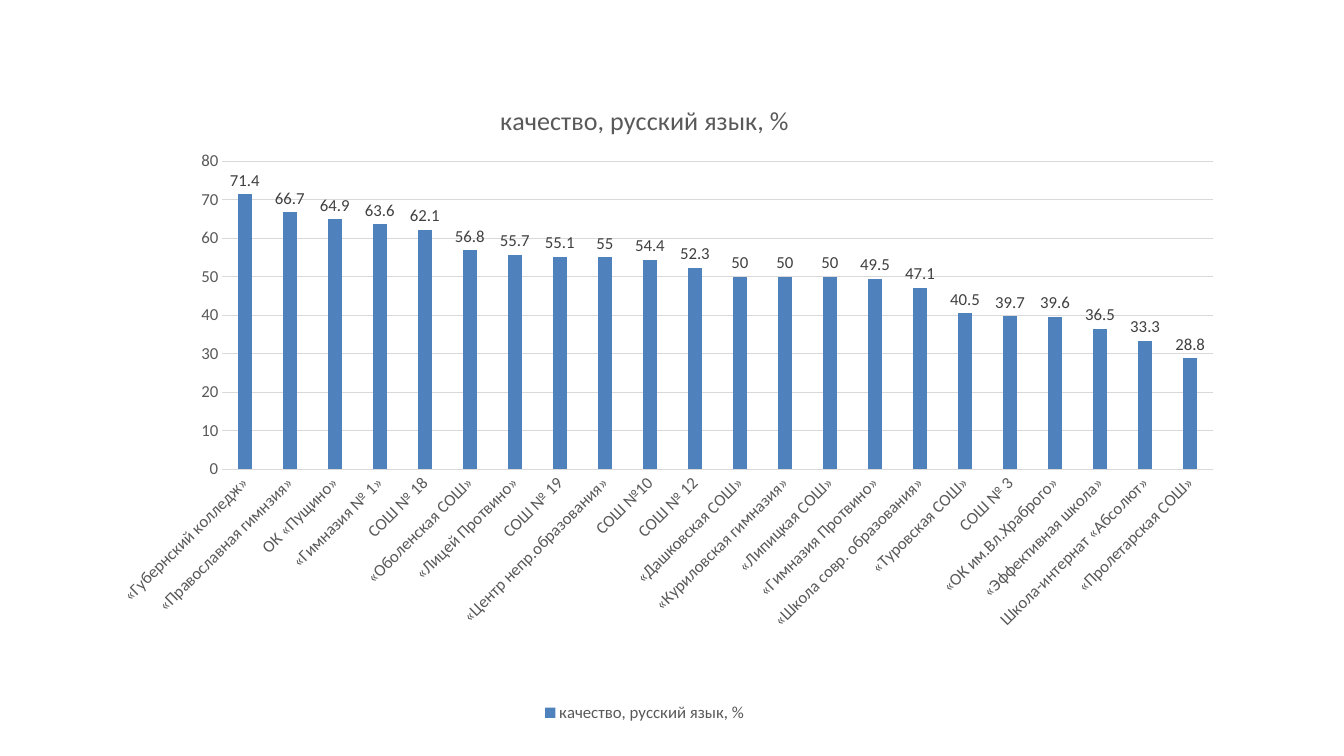
from lxml.etree import SubElement
from pptx import Presentation
from pptx.chart.data import CategoryChartData
from pptx.dml.color import RGBColor
from pptx.enum.chart import XL_CHART_TYPE, XL_LABEL_POSITION, XL_LEGEND_POSITION, XL_TICK_MARK
from pptx.oxml.ns import qn
from pptx.util import Inches, Pt

BAR_BLUE = RGBColor(0x4F, 0x81, 0xBD)
TEXT_GRAY = RGBColor(0x59, 0x59, 0x59)
VALUE_GRAY = RGBColor(0x40, 0x40, 0x40)
GRID_GRAY = RGBColor(0xD9, 0xD9, 0xD9)

QUALITY_TITLE = "качество, русский язык, %"
QUALITY_BY_SCHOOL = {
    "«Губернский колледж»": 71.4,
    "«Православная гимнзия»": 66.7,
    "ОК «Пущино»": 64.9,
    "«Гимназия № 1»": 63.6,
    "СОШ № 18": 62.1,
    "«Оболенская СОШ»": 56.8,
    "«Лицей Протвино»": 55.7,
    "СОШ № 19": 55.1,
    "«Центр непр.образования»": 55,
    "СОШ №10": 54.4,
    "СОШ № 12": 52.3,
    "«Дашковская СОШ»": 50,
    "«Куриловская гимназия»": 50,
    "«Липицкая СОШ»": 50,
    "«Гимназия Протвино»": 49.5,
    "«Школа совр. образования»": 47.1,
    "«Туровская СОШ»": 40.5,
    "СОШ № 3": 39.7,
    "«ОК им.Вл.Храброго»": 39.6,
    "«Эффективная школа»": 36.5,
    "Школа-интернат «Абсолют»": 33.3,
    "«Пролетарская СОШ»": 28.8,
}


def apply_format(target, values):
    for name, value in values.items():
        setattr(target, name, value)


def apply_font(font, size, color):
    apply_format(font, {"name": "Calibri", "size": Pt(size), "bold": False})
    font.color.rgb = color


deck = Presentation()
apply_format(deck, {"slide_width": Inches(13.33), "slide_height": Inches(7.5)})
slide = deck.slides.add_slide(deck.slide_layouts[6])

quality_data = CategoryChartData()
quality_data.categories = list(QUALITY_BY_SCHOOL)
quality_data.add_series(QUALITY_TITLE, list(QUALITY_BY_SCHOOL.values()))
quality = slide.shapes.add_chart(
    XL_CHART_TYPE.COLUMN_CLUSTERED,
    Inches(0.67), Inches(0.79), Inches(11.45), Inches(6.42),
    quality_data,
).chart
apply_font(quality.font, 10, RGBColor(0, 0, 0))

apply_format(quality, {"has_title": True, "has_legend": True})
heading = quality.chart_title.text_frame
heading.text = QUALITY_TITLE
apply_font(heading.paragraphs[0].runs[0].font, 18.6, TEXT_GRAY)

apply_format(quality.legend, {
    "position": XL_LEGEND_POSITION.BOTTOM,
    "include_in_layout": False,
})
apply_font(quality.legend.font, 12, TEXT_GRAY)

columns = quality.plots[0]
apply_format(columns, {
    "gap_width": 219,
    "overlap": -27,
    "vary_by_categories": False,
    "has_data_labels": True,
})
bars = columns.series[0]
bars.format.fill.solid()
bars.format.fill.fore_color.rgb = BAR_BLUE
apply_format(columns.data_labels, {
    "show_value": True,
    "position": XL_LABEL_POSITION.OUTSIDE_END,
    "number_format": "General",
    "number_format_is_linked": False,
})
apply_font(columns.data_labels.font, 12, VALUE_GRAY)

schools, percent = quality.category_axis, quality.value_axis
for axis in (schools, percent):
    apply_format(axis, {
        "major_tick_mark": XL_TICK_MARK.NONE,
        "minor_tick_mark": XL_TICK_MARK.NONE,
    })
    apply_font(axis.tick_labels.font, 12, TEXT_GRAY)

apply_format(percent, {
    "minimum_scale": 0,
    "maximum_scale": 80,
    "major_unit": 10,
    "has_major_gridlines": True,
})
percent.format.line.fill.background()
for line in (schools.format.line, percent.major_gridlines.format.line):
    line.color.rgb = GRID_GRAY
    line.width = Pt(0.75)

label_body = schools._element.find(qn("c:txPr")).find(qn("a:bodyPr"))
label_body.set("rot", str(-45 * 60000))
label_body.set("vert", "horz")

plot_area = quality._chartSpace.chart.plotArea
for automatic_layout in plot_area.findall(qn("c:layout")):
    plot_area.remove(automatic_layout)
plot_layout = SubElement(plot_area, qn("c:layout"))
plot_area.insert(0, plot_layout)
manual_layout = SubElement(plot_layout, qn("c:manualLayout"))
for tag, value in {
    "layoutTarget": "inner",
    "xMode": "edge",
    "yMode": "edge",
    "x": "0.134",
    "y": "0.126",
    "w": "0.858",
    "h": "0.476",
}.items():
    SubElement(manual_layout, qn(f"c:{tag}")).set("val", value)

deck.save("out.pptx")
